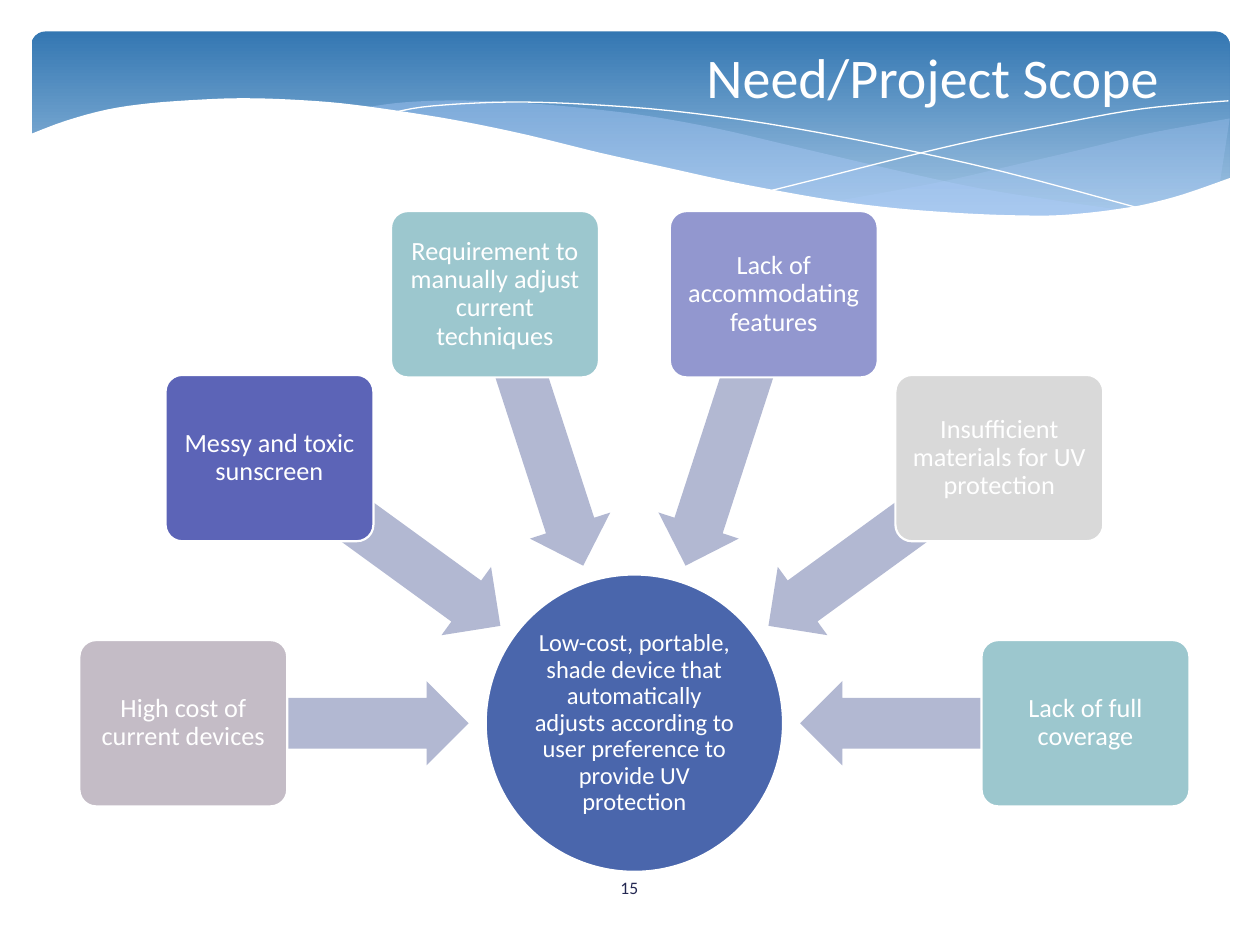
from math import cos, radians, sin

from lxml import etree
from pptx import Presentation
from pptx.dml.color import RGBColor
from pptx.enum.shapes import MSO_SHAPE
from pptx.enum.text import MSO_ANCHOR, MSO_AUTO_SIZE, PP_ALIGN
from pptx.oxml.ns import qn
from pptx.util import Inches, Pt

LEFT_ARROW, ROUNDED = MSO_SHAPE.LEFT_ARROW, MSO_SHAPE.ROUNDED_RECTANGLE
OVAL = MSO_SHAPE.OVAL
MIDDLE, NO_FIT = MSO_ANCHOR.MIDDLE, MSO_AUTO_SIZE.NONE
CENTER, RIGHT = PP_ALIGN.CENTER, PP_ALIGN.RIGHT

FONT = "Calibri"
WHITE = RGBColor(0xFF, 0xFF, 0xFF)
NAVY = RGBColor(0x24, 0x28, 0x52)
BANNER_TOP = RGBColor(0x34, 0x77, 0xB2)
BANNER_BOTTOM = RGBColor(0xA1, 0xC4, 0xE3)
WAVE_BLUE = RGBColor(0xAC, 0xCB, 0xF9)
HUB_BLUE = RGBColor(0x4A, 0x66, 0xAC)
ARROW_GREY = RGBColor(0xB2, 0xB8, 0xD2)
MAUVE = RGBColor(0xC4, 0xBC, 0xC6)
INDIGO = RGBColor(0x5C, 0x64, 0xB7)
TEAL = RGBColor(0x9C, 0xC7, 0xCE)
LAVENDER = RGBColor(0x92, 0x97, 0xCF)
SILVER = RGBColor(0xD9, 0xD9, 0xD9)

# Curves of the banner, in inches from its top left corner
RIGHT_WAVE_TOP = [(9.51, 0.69), (9.23, 0.74), (8.81, 0.82), (8.36, 0.93),
                  (7.8, 1.06), (7.28, 1.18), (6.81, 1.27), (6.36, 1.35)]
RIGHT_WAVE_BOTTOM = [(6.36, 1.35), (6.8, 1.4), (7.2, 1.44), (7.67, 1.47), (8.1, 1.47),
                     (8.47, 1.44), (8.8, 1.38), (9.1, 1.31), (9.51, 1.16)]
LEFT_WAVE_TOP = [(8.68, 1.42), (8.12, 1.34), (7.5, 1.24), (6.81, 1.09), (6.04, 0.91),
                 (5.44, 0.77), (4.89, 0.67), (4.4, 0.61), (3.95, 0.57), (3.55, 0.55),
                 (3.19, 0.55), (2.88, 0.57), (2.61, 0.61)]
LEFT_WAVE_BOTTOM = [(2.61, 0.61), (3.17, 0.69), (3.79, 0.81), (4.66, 1.01), (5.41, 1.18),
                    (6.09, 1.31), (6.7, 1.4), (7.23, 1.45), (7.71, 1.48), (8.13, 1.47),
                    (8.42, 1.45), (8.68, 1.42)]
FALLING_LINE = [(2.84, 0.65), (3.1, 0.6), (3.49, 0.57), (3.91, 0.56), (4.44, 0.58),
                (5.08, 0.63), (5.83, 0.73), (6.7, 0.89), (7.7, 1.11), (8.82, 1.41)]
RISING_LINE = [(5.88, 1.26), (6.28, 1.16), (6.95, 0.99), (7.51, 0.86), (8.11, 0.74),
               (8.7, 0.63), (9.13, 0.58), (9.5, 0.55)]
PAGE_EDGE = [(-0.02, 0.82), (0.27, 0.71), (0.6, 0.62), (0.94, 0.57), (1.36, 0.54),
             (1.68, 0.53), (2.05, 0.54), (2.46, 0.57), (2.91, 0.63), (3.4, 0.71),
             (3.93, 0.82), (4.5, 0.96), (5.04, 1.08), (5.54, 1.19), (6.01, 1.28),
             (6.43, 1.35), (6.83, 1.4), (7.19, 1.43), (7.53, 1.45), (7.84, 1.46),
             (8.12, 1.46), (8.38, 1.44), (8.62, 1.41), (8.85, 1.37), (9.15, 1.29),
             (9.52, 1.16)]

NEEDS = [
    ("High cost of current devices", MAUVE),
    ("Messy and toxic sunscreen", INDIGO),
    ("Requirement to manually adjust current techniques", TEAL),
    ("Lack of accommodating features", LAVENDER),
    ("Insufficient materials for UV protection", SILVER),
    ("Lack of full coverage", TEAL),
]
SCOPE = ("Low-cost, portable, shade device that automatically adjusts "
         "according to user preference to provide UV protection")


def smooth(knots, steps=4):
    """Return points on a Catmull-Rom spline through the knots."""
    padded = [knots[0], *knots, knots[-1]]
    points = [knots[0]]
    for a, b, c, d in zip(padded, padded[1:], padded[2:], padded[3:]):
        for step in range(1, steps + 1):
            t = step / steps
            points.append(tuple(
                (2 * q + (r - p) * t + (2 * p - 5 * q + 4 * r - s) * t ** 2
                 + (3 * q - p - 3 * r + s) * t ** 3) / 2
                for p, q, r, s in zip(a, b, c, d)))
    return points


def add_path(slide, left, top, points, closed):
    first, *rest = [(left + Inches(x), top + Inches(y)) for x, y in points]
    builder = slide.shapes.build_freeform(*first)
    builder.add_line_segments(rest, close=closed)
    path = builder.convert_to_shape()
    path.shadow.inherit = False
    return path


def add_area(slide, left, top, points, color, opacity=100):
    area = add_path(slide, left, top, points, True)
    area.fill.solid()
    area.fill.fore_color.rgb = color
    area.line.fill.background()
    if opacity < 100:
        color_xml = area._element.spPr.find(".//" + qn("a:srgbClr"))
        etree.SubElement(color_xml, qn("a:alpha")).set("val", str(opacity * 1000))


def add_banner(slide, left, top, width, height):
    band = slide.shapes.add_shape(ROUNDED, left, top, width, height)
    band.adjustments[0] = 0.07
    band.shadow.inherit = False
    band.line.fill.background()
    band.fill.gradient()
    band.fill.gradient_angle = 270
    stops = zip(band.fill.gradient_stops, (0, 0.9), (BANNER_TOP, BANNER_BOTTOM))
    for stop, position, color in stops:
        stop.position = position
        stop.color.rgb = color

    for upper, lower, opacity in ((RIGHT_WAVE_TOP, RIGHT_WAVE_BOTTOM, 29),
                                  (LEFT_WAVE_TOP, LEFT_WAVE_BOTTOM, 40)):
        add_area(slide, left, top, smooth(upper) + smooth(lower)[1:-1], WAVE_BLUE, opacity)
    for knots in (FALLING_LINE, RISING_LINE):
        strand = add_path(slide, left, top, smooth(knots), False)
        strand.fill.background()
        strand.line.color.rgb = WHITE
        strand.line.width = Pt(0)
    add_area(slide, left, top, smooth(PAGE_EDGE) + [(9.52, 1.99), (-0.02, 1.99)], WHITE)


def write(shape, text, size, color=WHITE, align=CENTER, inset=0.1):
    frame = shape.text_frame
    frame.word_wrap = True
    frame.auto_size = NO_FIT
    frame.vertical_anchor = MIDDLE
    frame.margin_left = frame.margin_right = Inches(inset)
    frame.margin_top = frame.margin_bottom = Inches(min(inset, 0.05))
    paragraph = frame.paragraphs[0]
    paragraph.alignment = align
    run = paragraph.add_run()
    run.text = text
    run.font.name = FONT
    run.font.size = Pt(size)
    run.font.color.rgb = color
    return paragraph


def add_centered(slide, kind, x, y, width, height, color):
    shape = slide.shapes.add_shape(kind, int(x - width / 2), int(y - height / 2), width, height)
    shape.shadow.inherit = False
    shape.fill.solid()
    shape.fill.fore_color.rgb = color
    shape.line.fill.background()
    return shape


def add_node(slide, kind, x, y, width, height, color, text, size, inset):
    node = add_centered(slide, kind, x, y, width, height, color)
    node.line.color.rgb = WHITE
    node.line.width = Pt(1.25)
    paragraph = write(node, text, size, inset=inset)
    paragraph.line_spacing = 0.9
    paragraph.space_after = Pt(5)
    return node


def add_converging_needs(slide, left, top, width, height):
    """Fan the needs over a half circle, each pointing at the scope below."""
    hub_size, box_width, box_height = Inches(2.36), Inches(1.65), Inches(1.32)
    hub_x, hub_y = left + width / 2, top + height - hub_size / 2
    box_radius, arrow_radius = (width - box_width) / 2, Inches(2.45)
    add_node(slide, OVAL, hub_x, hub_y, hub_size, hub_size, HUB_BLUE, SCOPE, 14, 0.01)
    for index, (need, color) in enumerate(NEEDS):
        angle = 180 + index * 180 / (len(NEEDS) - 1)
        across, down = cos(radians(angle)), sin(radians(angle))
        arrow = add_centered(slide, LEFT_ARROW, hub_x + arrow_radius * across,
                             hub_y + arrow_radius * down, Inches(2.27), Inches(0.67), ARROW_GREY)
        arrow.adjustments[0] = 0.6
        arrow.rotation = angle
        box = add_node(slide, ROUNDED, hub_x + box_radius * across, hub_y + box_radius * down,
                       box_width, box_height, color, need, 15, 0.03)
        box.adjustments[0] = 0.1


def add_title(slide, left, top, width, height):
    title = slide.shapes.title
    title.left, title.top, title.width, title.height = left, top, width, height
    write(title, "Need/Project Scope", 32, align=RIGHT)
    slide.shapes._spTree.append(title._element)  # in front of the banner


def add_page_number(slide, left, top, width, height):
    write(slide.shapes.add_textbox(left, top, width, height), "15", 10, NAVY)


def main():
    deck = Presentation()
    deck.slide_width, deck.slide_height = Inches(10), Inches(7.5)
    slide = deck.slides.add_slide(deck.slide_layouts[5])
    add_banner(slide, Inches(0.25), Inches(0.25), Inches(9.51), Inches(1.56))
    add_page_number(slide, Inches(4.36), Inches(6.84), Inches(1.27), Inches(0.4))
    add_title(slide, Inches(2.61), Inches(-0.08), Inches(6.69), Inches(1.37))
    add_converging_needs(slide, Inches(0.63), Inches(1.67), Inches(8.81), Inches(5.25))
    deck.save("out.pptx")


if __name__ == "__main__":
    main()
